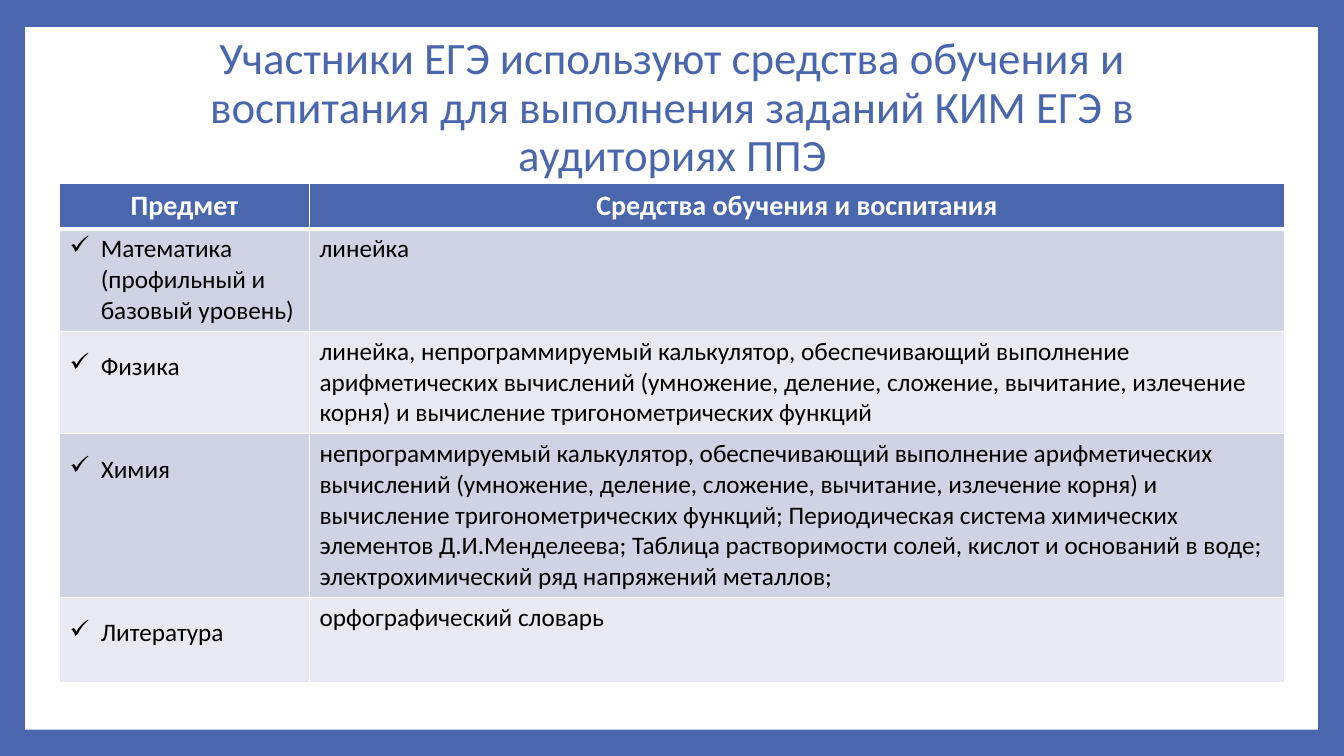
"""Build the slide on the study aids allowed at each exam."""
from lxml import etree
from pptx import Presentation
from pptx.dml.color import RGBColor
from pptx.enum import shapes, text
from pptx.oxml.ns import qn
from pptx.util import Inches, Pt

TITLE = ("Участники ЕГЭ используют средства обучения и воспитания "
         "для выполнения заданий КИМ ЕГЭ в аудиториях ППЭ")
HEADINGS = ("Предмет", "Средства обучения и воспитания")
AIDS = [
    ("Математика (профильный и базовый уровень)", "линейка"),
    ("Физика",
     "линейка, непрограммируемый калькулятор, обеспечивающий выполнение "
     "арифметических вычислений (умножение, деление, сложение, вычитание, "
     "излечение корня) и вычисление тригонометрических функций"),
    ("Химия",
     "непрограммируемый калькулятор, обеспечивающий выполнение арифметических "
     "вычислений (умножение, деление, сложение, вычитание, излечение корня) и "
     "вычисление тригонометрических функций; Периодическая система химических "
     "элементов Д.И.Менделеева; Таблица растворимости солей, кислот и оснований "
     "в воде; электрохимический ряд напряжений металлов;"),
    ("Литература", "орфографический словарь"),
]
COLUMN_WIDTHS = (2.48, 9.67)
ROW_HEIGHTS = (0.45, 0.77, 0.84, 0.84, 0.84)
COLORS = {"blue": "4A66AC", "white": "FFFFFF", "black": "000000",
          "odd": "D0D3E3", "even": "E9EAF1"}
FONT = "Calibri"


def paint(fill, color):
    fill.solid()
    fill.fore_color.rgb = RGBColor.from_string(COLORS[color])


def add_run(paragraph, wording, size, color, bold=False):
    run = paragraph.add_run()
    run.text = wording
    run.font.name = FONT
    run.font.size = Pt(size)
    run.font.bold = bold
    run.font.color.rgb = RGBColor.from_string(COLORS[color])


def add_borders(cell, bottom):
    properties = cell._tc.get_or_add_tcPr()
    for place, (side, width) in enumerate(
            (("lnL", 1), ("lnR", 1), ("lnT", 1), ("lnB", bottom))):
        line = etree.Element(qn(f"a:{side}"), w=str(Pt(width)))
        fill = etree.SubElement(line, qn("a:solidFill"))
        etree.SubElement(fill, qn("a:srgbClr"), val=COLORS["white"])
        properties.insert(place, line)


def add_check(paragraph):
    properties = paragraph._p.get_or_add_pPr()
    indent = Inches(0.31)
    properties.set("marL", str(indent))
    properties.set("indent", str(-indent))
    etree.SubElement(properties, qn("a:buChar"), char="✓")


def add_panel(slide):
    panel = slide.shapes.add_shape(
        shapes.MSO_SHAPE.RECTANGLE,
        Inches(0.25), Inches(0.27), Inches(12.82), Inches(6.97))
    panel.shadow.inherit = False
    paint(panel.fill, "white")
    panel.line.fill.background()
    slide.shapes._spTree.insert(2, panel._element)


def add_title(slide):
    title = slide.shapes.title
    title.left, title.top = Inches(1.27), Inches(0.34)
    title.width, title.height = Inches(10.8), Inches(1.48)
    frame = title.text_frame
    frame.word_wrap = True
    frame.auto_size = text.MSO_AUTO_SIZE.NONE
    frame.vertical_anchor = text.MSO_ANCHOR.MIDDLE
    heading = frame.paragraphs[0]
    heading.alignment = text.PP_ALIGN.CENTER
    heading.line_spacing = 0.9
    add_run(heading, TITLE, 32, "blue")


def add_aids(slide):
    rows = [HEADINGS, *AIDS]
    aids = slide.shapes.add_table(
        len(rows), len(HEADINGS), Inches(0.59), Inches(1.82),
        Inches(sum(COLUMN_WIDTHS)), Inches(sum(ROW_HEIGHTS))).table
    for column, width in zip(aids.columns, COLUMN_WIDTHS):
        column.width = Inches(width)
    for row, height in zip(aids.rows, ROW_HEIGHTS):
        row.height = Inches(height)
    for r, row in enumerate(rows):
        for c, wording in enumerate(row):
            cell = aids.cell(r, c)
            paragraph = cell.text_frame.paragraphs[0]
            if r == 0:
                paint(cell.fill, "blue")
                paragraph.alignment = text.PP_ALIGN.CENTER
                add_run(paragraph, wording, 20, "white", bold=True)
            else:
                paint(cell.fill, "odd" if r % 2 else "even")
                if c == 0:
                    add_check(paragraph)
                    if r > 1:
                        paragraph.line_spacing = 1.5
                add_run(paragraph, wording, 18, "black")
            add_borders(cell, bottom=1 if r else 3)


def main():
    deck = Presentation()
    deck.slide_width, deck.slide_height = Inches(13.33), Inches(7.5)
    slide = deck.slides.add_slide(deck.slide_layouts[5])
    paint(slide.background.fill, "blue")
    add_panel(slide)
    add_title(slide)
    add_aids(slide)
    deck.save("out.pptx")


if __name__ == "__main__":
    main()
